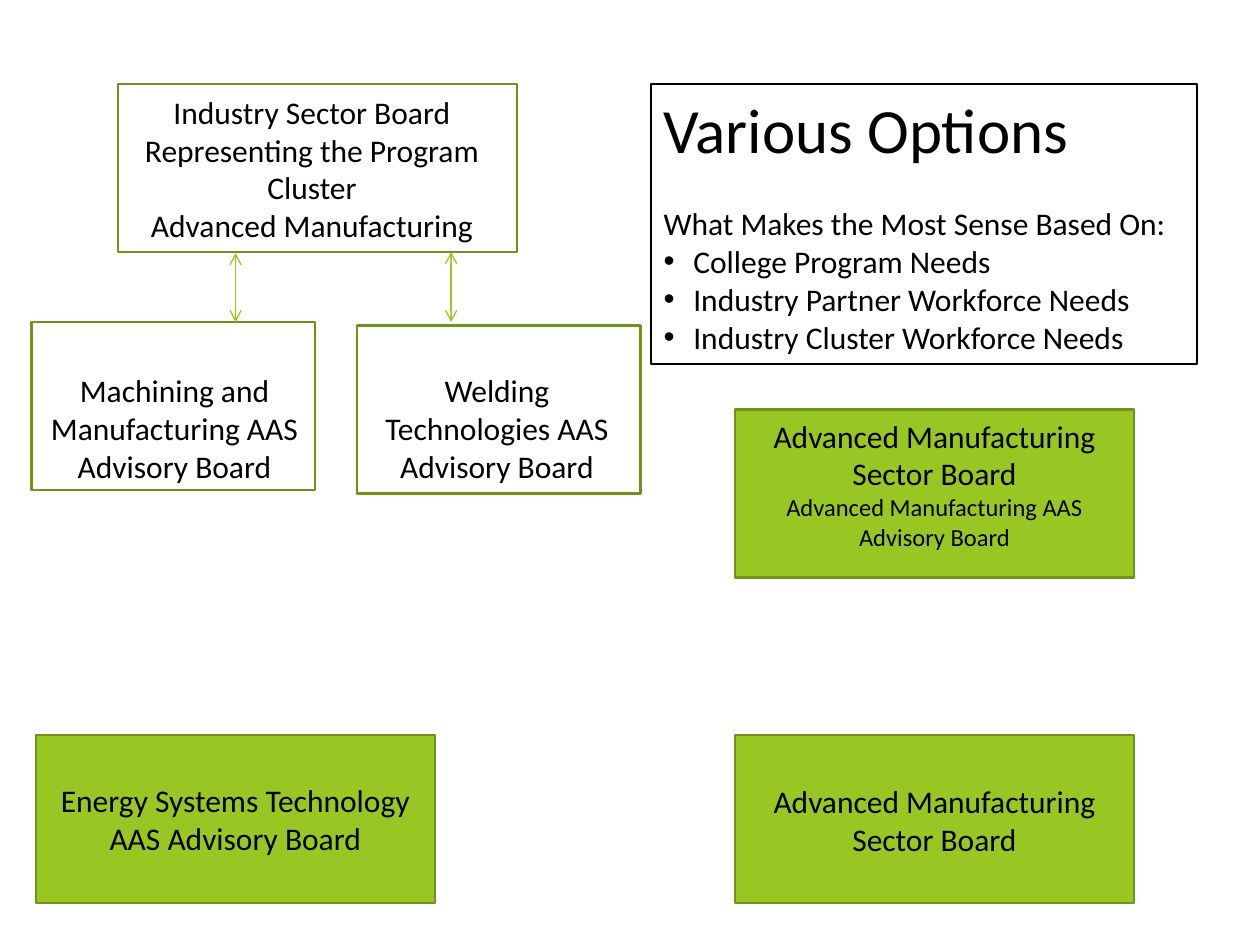
from lxml import etree
from pptx import Presentation
from pptx.dml.color import RGBColor
from pptx.enum.shapes import MSO_CONNECTOR, MSO_SHAPE
from pptx.enum.text import MSO_ANCHOR, MSO_AUTO_SIZE, PP_ALIGN
from pptx.oxml.ns import qn
from pptx.util import Pt

RECTANGLE = MSO_SHAPE.RECTANGLE
STRAIGHT = MSO_CONNECTOR.STRAIGHT
TOP, MIDDLE = MSO_ANCHOR.TOP, MSO_ANCHOR.MIDDLE
LEFT, CENTER = PP_ALIGN.LEFT, PP_ALIGN.CENTER
FIXED_SIZE = MSO_AUTO_SIZE.NONE

BLACK = RGBColor(0x00, 0x00, 0x00)
GREEN = RGBColor(0x98, 0xC7, 0x23)
DARK_GREEN = RGBColor(0x70, 0x93, 0x1A)
ARROW_GREEN = RGBColor(0x96, 0xC7, 0x1E)
FONT = "Calibri"
BODY_SIZE = 18
BOARD_HEIGHT = 96
WIDE, NARROW = 228, 162

# Each board: box, filled or not, label box (None: inside the board), lines with sizes
BOARDS = [
    ((67.5, 48, WIDE, BOARD_HEIGHT), False, (72, 49.5, 212.5, 94.5),
     [("Industry Sector Board", 18), ("Representing the Program Cluster", 18),
      ("Advanced Manufacturing", 18)]),
    ((18, 184, NARROW, BOARD_HEIGHT), False, (20.5, 208.5, 158.5, 72.7),
     [("Machining and Manufacturing AAS", 18), ("Advisory Board", 18)]),
    ((204, 186, NARROW, BOARD_HEIGHT), False, (203, 208.5, NARROW, 72.7),
     [("Welding Technologies AAS", 18), ("Advisory Board", 18)]),
    ((20.5, 420, WIDE, BOARD_HEIGHT), True, None,
     [("Energy Systems Technology AAS Advisory Board", 18)]),
    ((420, 420, WIDE, BOARD_HEIGHT), True, (420, 443.5, WIDE, 51),
     [("Advanced Manufacturing Sector Board", 18)]),
    ((420, 234, WIDE, BOARD_HEIGHT), True, (420, 234.5, WIDE, 85),
     [("Advanced Manufacturing Sector Board", 18),
      ("Advanced Manufacturing AAS Advisory Board", 14)]),
]
ARROWS = [(257.8, 144, 184), (134.6, 144.7, 184)]  # x, top, bottom
OPTIONS = [
    ("Various Options", 36),
    ("What Makes the Most Sense Based On:", BODY_SIZE),
    ("College Program Needs", BODY_SIZE),
    ("Industry Partner Workforce Needs", BODY_SIZE),
    ("Industry Cluster Workforce Needs", BODY_SIZE),
]


def write_lines(frame, lines, alignment, anchor):
    frame.word_wrap = True
    frame.auto_size = FIXED_SIZE
    frame.vertical_anchor = anchor
    frame.text = "\n".join(text for text, size in lines)
    for para, (text, size) in zip(frame.paragraphs, lines):
        para.alignment = alignment
        font = para.runs[0].font
        font.name, font.size = FONT, Pt(size)
        font.color.rgb = BLACK


def add_board(page, box, filled, label_box, lines):
    board = page.shapes.add_shape(RECTANGLE, *map(Pt, box))
    board.shadow.inherit = False
    board.line.color.rgb = DARK_GREEN
    board.line.width = Pt(1.25)
    if filled:
        board.fill.solid()
        board.fill.fore_color.rgb = GREEN
    else:
        board.fill.background()
    if label_box is None:
        write_lines(board.text_frame, lines, CENTER, MIDDLE)
    else:
        label = page.shapes.add_textbox(*map(Pt, label_box))
        write_lines(label.text_frame, lines, CENTER, TOP)


def add_double_arrow(page, x, top, bottom):
    arrow = page.shapes.add_connector(STRAIGHT, Pt(x), Pt(top), Pt(x), Pt(bottom))
    arrow.line.color.rgb = ARROW_GREEN
    arrow.line.width = Pt(0.75)
    line = arrow.line._get_or_add_ln()
    for end in ("a:headEnd", "a:tailEnd"):
        etree.SubElement(line, qn(end), type="arrow")
    etree.SubElement(arrow._element.spPr, qn("a:effectLst"))


def place_options_panel(page, box):
    """Turn the title placeholder into the framed heading with its bullets."""
    panel = page.shapes.title
    panel.left, panel.top, panel.width, panel.height = map(Pt, box)
    panel.line.color.rgb = BLACK
    panel.line.width = Pt(0.75)
    write_lines(panel.text_frame, OPTIONS, LEFT, TOP)
    heading, _, *bullets = panel.text_frame.paragraphs
    heading.space_after = Pt(22)
    for para in bullets:
        properties = para._p.get_or_add_pPr()
        etree.SubElement(properties, qn("a:buFont"), typeface="Arial")
        etree.SubElement(properties, qn("a:buChar"), char="•")


def main():
    deck = Presentation()
    deck.slide_width, deck.slide_height = Pt(720), Pt(540)
    page = deck.slides.add_slide(deck.slide_layouts[5])
    for board in BOARDS:
        add_board(page, *board)
    for arrow in ARROWS:
        add_double_arrow(page, *arrow)
    place_options_panel(page, (372, 48, 312, 160))
    deck.save("out.pptx")


if __name__ == "__main__":
    main()
